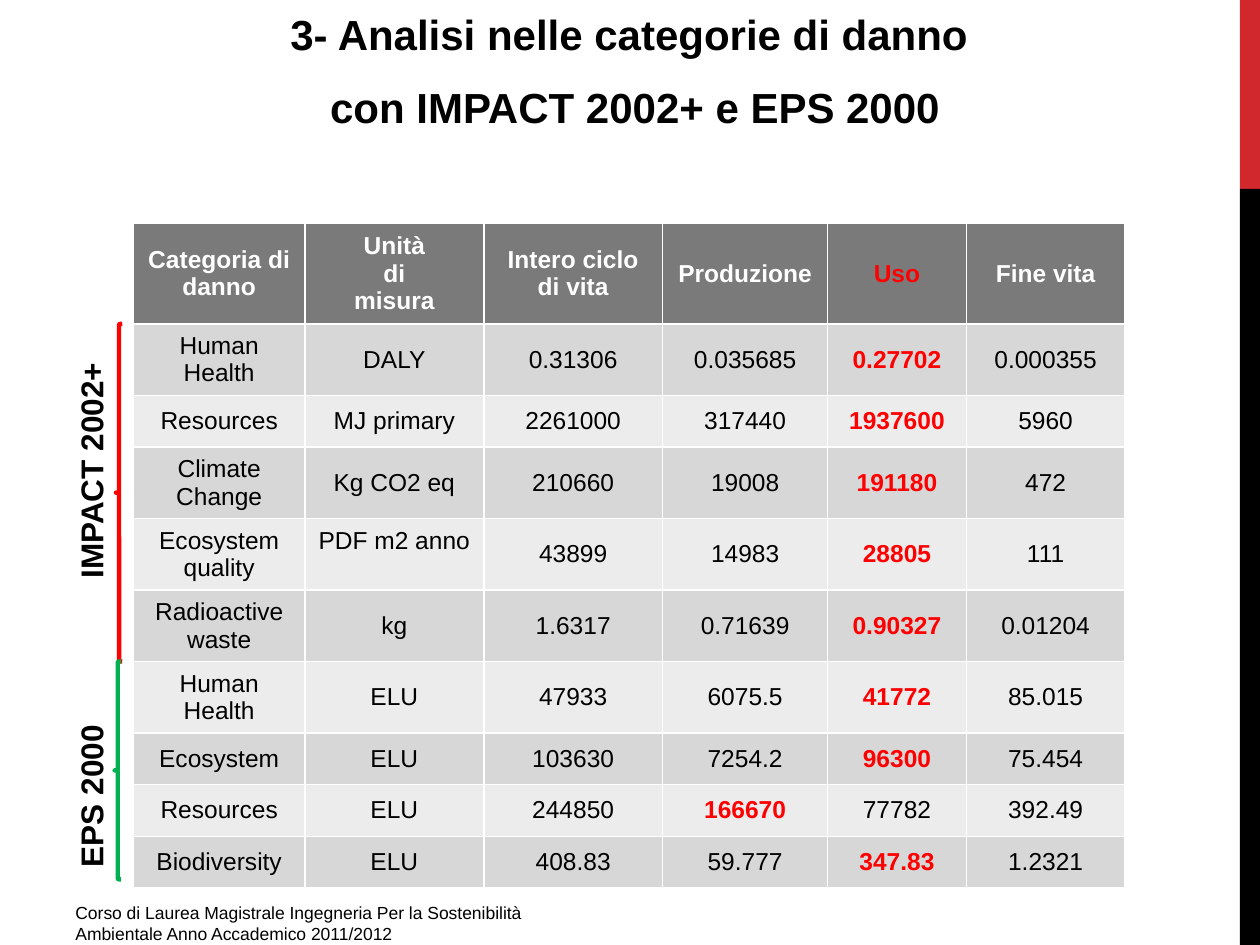
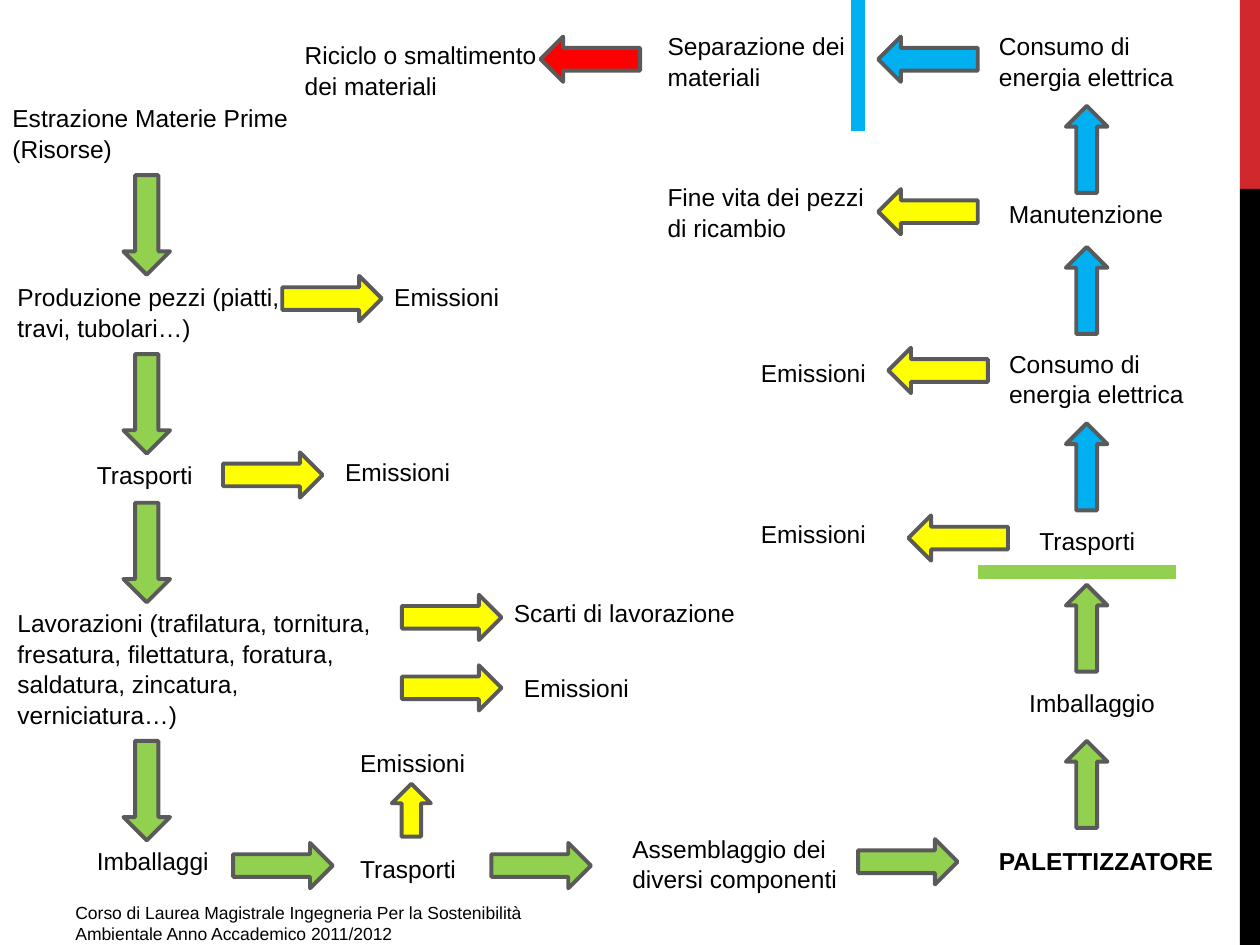
"""Build two slides on damage categories and the life cycle of a product."""
import pptx
import pptx.dml.color
import pptx.enum.shapes
import pptx.enum.text
import pptx.oxml.ns
import pptx.util
from lxml import etree

Inches = pptx.util.Inches
Pt = pptx.util.Pt
MSO_SHAPE = pptx.enum.shapes.MSO_SHAPE
ANCHOR = pptx.enum.text.MSO_ANCHOR
ALIGN = pptx.enum.text.PP_ALIGN
qn = pptx.oxml.ns.qn

FONT = "Arial"
BLACK, WHITE, RED = "000000", "FFFFFF", "FF0000"
BAND_RED, OUTLINE = "D1282E", "5A5A5A"
GREEN, YELLOW, BLUE, BRACE_GREEN = "92D050", "FFFF00", "00B0F0", "00B050"
HEADER, ROW_FILLS = "7A7A7A", ("D7D7D7", "ECECEC")
FOOTER = ("Corso di Laurea Magistrale Ingegneria Per la Sostenibilità "
          "Ambientale Anno Accademico 2011/2012")
ARROWS = {
    "right": (MSO_SHAPE.RIGHT_ARROW, 0.79, 0.36, 0),
    "left": (MSO_SHAPE.RIGHT_ARROW, 0.79, 0.36, 180),
    "down": (MSO_SHAPE.DOWN_ARROW, 0.37, 0.79, 0),
    "up": (MSO_SHAPE.UP_ARROW, 0.33, 0.69, 0),
}


def rgb(value):
    return pptx.dml.color.RGBColor.from_string(value)


class Deck:
    def __init__(self):
        self.prs = pptx.Presentation()
        self.prs.slide_width, self.prs.slide_height = Inches(10), Inches(7.5)
        self.slide = None

    def new_slide(self, layout):
        self.slide = self.prs.slides.add_slide(self.prs.slide_layouts[layout])
        self.shape(MSO_SHAPE.RECTANGLE, 9.84, 0, 0.16, 1.5, fill=BAND_RED)
        self.shape(MSO_SHAPE.RECTANGLE, 9.84, 1.5, 0.16, 6, fill=BLACK)
        self.text(FOOTER, 0.5, 7.1, 3.75, 0.31, size=10)

    def format(self, tf, size, color=BLACK, bold=False, align=ALIGN.LEFT, spacing=None):
        for p in tf.paragraphs:
            p.alignment = align
            p.line_spacing = spacing
            for r in p.runs:
                r.font.name, r.font.size, r.font.bold = FONT, Pt(size), bold
                r.font.color.rgb = rgb(color)

    def text(self, text, x, y, w, h=0.34, size=14, bold=False, rotation=0):
        sp = self.slide.shapes.add_textbox(Inches(x), Inches(y), Inches(w), Inches(h))
        sp.rotation = rotation
        tf = sp.text_frame
        tf.word_wrap = True
        tf.text = text
        self.format(tf, size, bold=bold, spacing=1.04)

    def title(self, text, x, y, w, h):
        sp = self.slide.shapes.title
        sp.left, sp.top, sp.width, sp.height = Inches(x), Inches(y), Inches(w), Inches(h)
        tf = sp.text_frame
        tf.auto_size = pptx.enum.text.MSO_AUTO_SIZE.NONE
        tf.vertical_anchor = ANCHOR.TOP
        tf.text = text
        self.format(tf, 24, bold=True, align=ALIGN.CENTER, spacing=1.04)
        for p in tf.paragraphs:
            p.space_before = Pt(12)

    def shape(self, kind, x, y, w, h, fill=None, line=None, weight=2.25):
        sp = self.slide.shapes.add_shape(kind, Inches(x), Inches(y), Inches(w), Inches(h))
        sp.shadow.inherit = False
        if fill:
            sp.fill.solid()
            sp.fill.fore_color.rgb = rgb(fill)
        else:
            sp.fill.background()
        if line:
            sp.line.color.rgb = rgb(line)
            sp.line.width = Pt(weight)
            etree.SubElement(sp._element.spPr.find(qn("a:ln")), qn("a:round"))
        else:
            sp.line.fill.background()
        return sp

    def arrow(self, direction, x, y, fill):
        kind, w, h, rotation = ARROWS[direction]
        self.shape(kind, x, y, w, h, fill, OUTLINE).rotation = rotation

    def line(self, x1, y1, x2, y2, color, weight=8.5):
        s = self.slide.shapes.add_connector(
            pptx.enum.shapes.MSO_CONNECTOR.STRAIGHT,
            Inches(x1), Inches(y1), Inches(x2), Inches(y2))
        s.line.color.rgb = rgb(color)
        s.line.width = Pt(weight)
        etree.SubElement(s._element.spPr, qn("a:effectLst"))

    def table(self, rows, x, y, widths, row_height, highlights):
        table = self.slide.shapes.add_table(
            len(rows), len(widths), Inches(x), Inches(y),
            Inches(sum(widths)), Inches(row_height * len(rows))).table
        for column, width in zip(table.columns, widths):
            column.width = Inches(width)
        for i, row in enumerate(rows):
            table.rows[i].height = Inches(row_height)
            for j, value in enumerate(row):
                cell = table.cell(i, j)
                cell.text = value
                cell.vertical_anchor = ANCHOR.MIDDLE
                cell.fill.solid()
                cell.fill.fore_color.rgb = rgb(ROW_FILLS[(i - 1) % 2] if i else HEADER)
                marked = j == highlights[i]
                color = RED if marked else BLACK if i else WHITE
                self.format(cell.text_frame, 14, color, marked or i == 0, ALIGN.CENTER)
        return table


DAMAGE_ROWS = [
    ("Categoria di danno", "Unità\ndi\nmisura", "Intero ciclo di vita", "Produzione", "Uso", "Fine vita"),
    ("Human Health", "DALY", "0.31306", "0.035685", "0.27702", "0.000355"),
    ("Resources", "MJ primary", "2261000", "317440", "1937600", "5960"),
    ("Climate Change", "Kg CO2 eq", "210660", "19008", "191180", "472"),
    ("Ecosystem quality", "PDF m2 anno", "43899", "14983", "28805", "111"),
    ("Radioactive waste", "kg", "1.6317", "0.71639", "0.90327", "0.01204"),
    ("Human Health", "ELU", "47933", "6075.5", "41772", "85.015"),
    ("Ecosystem", "ELU", "103630", "7254.2", "96300", "75.454"),
    ("Resources", "ELU", "244850", "166670", "77782", "392.49"),
    ("Biodiversity", "ELU", "408.83", "59.777", "347.83", "1.2321"),
]
USE, PRODUCTION = 4, 3

STEPS = [
    ("Estrazione Materie Prime (Risorse)", 0, 0.76, 2.72, 0.57),
    ("Produzione pezzi (piatti, travi, tubolari…)", 0.04, 2.18, 2.6, 0.57),
    ("Trasporti", 0.67, 3.59, 1.06),
    ("Lavorazioni (trafilatura, tornitura, fresatura, filettatura, foratura, "
     "saldatura, zincatura, verniciatura…)", 0.04, 4.77, 3.15, 1.04),
    ("Imballaggi", 0.67, 6.66, 1.22),
    ("Trasporti", 2.76, 6.72, 1.06),
    ("Assemblaggio dei diversi componenti", 4.92, 6.56, 2.13, 0.57),
    ("Imballaggio", 8.07, 5.4, 1.42),
    ("Trasporti", 8.15, 4.12, 1.1),
    ("Consumo di energia elettrica", 7.91, 2.71, 1.81, 0.57),
    ("Manutenzione", 7.91, 1.52, 1.97),
    ("Consumo di energia elettrica", 7.83, 0.19, 1.81, 0.57),
    ("Separazione dei materiali", 5.2, 0.19, 1.61, 0.57),
    ("Riciclo o smaltimento\ndei materiali", 2.32, 0.26, 2.2, 0.57),
    ("Fine vita dei pezzi di ricambio", 5.2, 1.39, 1.77, 0.57),
    ("Scarti di lavorazione", 3.98, 4.69, 2.76),
]
EMISSIONS = [(4.06, 5.28, 2.28), (2.64, 3.57, 2.28), (3.03, 2.18, 2.28),
             (5.94, 2.78, 1.14), (5.94, 4.06, 2.28), (2.76, 5.88, 1.3)]
FLOWS = [
    ("down", GREEN, [(0.98, y) for y in (1.39, 2.81, 3.99, 5.88)]),
    ("right", GREEN, [(1.85, 6.69), (3.9, 6.69), (6.81, 6.66)]),
    ("up", GREEN, [(8.46, y) for y in (5.88, 4.64)]),
    ("up", BLUE, [(8.46, y) for y in (3.36, 1.96, 0.84)]),
    ("left", BLUE, [(6.97, 0.29)]),
    ("left", RED, [(4.29, 0.29)]),
    ("right", YELLOW, [(3.19, 4.72), (3.19, 5.28), (1.77, 3.59), (2.24, 2.19)]),
    ("left", YELLOW, [(6.97, 1.5), (7.05, 2.76), (7.21, 4.09)]),
]


def damage_slide(deck):
    deck.new_slide(5)
    deck.title("3- Analisi nelle categorie di danno \ncon IMPACT 2002+ e EPS 2000",
               0.51, 0, 9.06, 1.38)
    highlights = [PRODUCTION if row[3] == "166670" else USE for row in DAMAGE_ROWS]
    table = deck.table(DAMAGE_ROWS, 1.06, 1.77, (1.36, 1.42, 1.42, 1.31, 1.1, 1.26),
                       0.41, highlights)
    table.cell(4, 1).margin_bottom = Inches(0.26)
    methods = [("IMPACT 2002+", 3.27, 0.92, 2.57, 2.68, RED),
               ("EPS 2000", 5.56, 0.91, 5.25, 1.73, BRACE_GREEN)]
    for name, label_y, x, y, h, color in methods:
        deck.text(name, -0.51, label_y, 2.44, 0.4, size=18, bold=True, rotation=270)
        deck.shape(MSO_SHAPE.LEFT_BRACE, x, y, 0.05, h, line=color, weight=2.5)


def life_cycle_slide(deck):
    deck.new_slide(6)
    for step in STEPS:
        deck.text(*step)
    deck.text("PALETTIZZATORE", 7.83, 6.66, 1.93, bold=True)
    for place in EMISSIONS:
        deck.text("Emissioni", *place)
    for direction, fill, places in FLOWS:
        for x, y in places:
            deck.arrow(direction, x, y, fill)
    deck.shape(MSO_SHAPE.UP_ARROW, 3.11, 6.22, 0.31, 0.42, YELLOW, OUTLINE)
    deck.line(6.81, 0, 6.81, 1.04, BLUE)
    deck.line(9.33, 4.54, 7.76, 4.54, GREEN)


def main():
    deck = Deck()
    damage_slide(deck)
    life_cycle_slide(deck)
    deck.prs.save("out.pptx")


if __name__ == "__main__":
    main()
